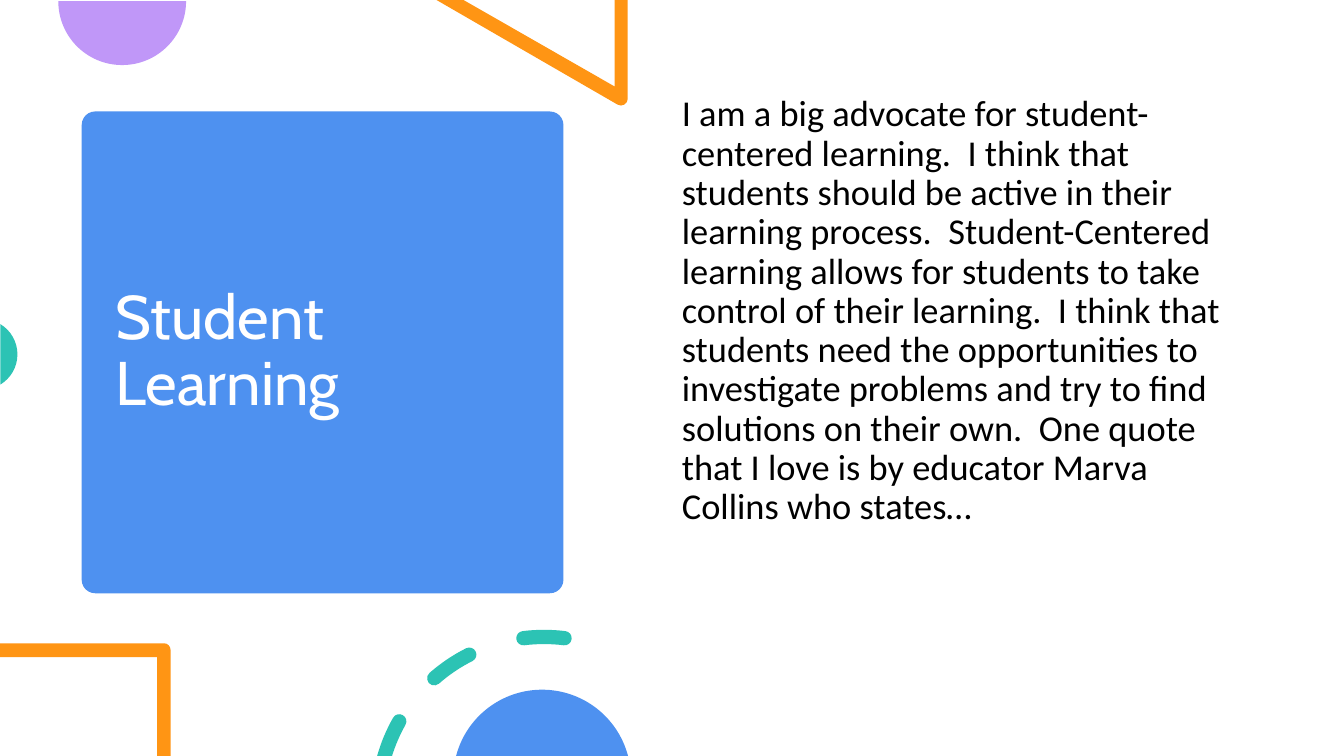
from math import ceil, cos, radians, sin, tan

from lxml.etree import SubElement
from pptx import Presentation
from pptx.dml.color import RGBColor
from pptx.enum.shapes import MSO_SHAPE as Shape
from pptx.enum.text import MSO_ANCHOR as Anchor, MSO_AUTO_SIZE as AutoSize, PP_ALIGN as Align
from pptx.oxml.ns import qn
from pptx.util import Cm, Pt

TITLE = "Student Learning"
BODY = (
    "I am a big advocate for student-centered learning.  I think that students "
    "should be active in their learning process.  Student-Centered learning allows "
    "for students to take control of their learning.  I think that students need "
    "the opportunities to investigate problems and try to find solutions on their "
    "own.  One quote that I love is by educator Marva Collins who states…"
)
WIDTH, HEIGHT = 33.87, 19.05
WHITE, BLUE, PURPLE, ORANGE, TEAL = "FFFFFF", "4E91F0", "C097F8", "FF9514", "2CC3B4"

BLOCKS = [
    (Shape.RECTANGLE, (0, 0, WIDTH, HEIGHT), WHITE),
    (Shape.ROUNDED_RECTANGLE, (2.06, 2.81, 12.14, 12.14), BLUE),
]
CIRCLES = [
    (PURPLE, (3.08, 0.03), 1.61, 0, 180),
    (TEAL, (-0.45, 8.93), 0.89, -59, 59),
    (BLUE, (13.66, 19.62), 2.24, 194.74, 345.26),
]
TRIANGLE = [(15.82, 0), (15.49, 0), (15.49, 2.18), (11.68, 0), (11, 0)]
SQUARE = [(4.3, HEIGHT), (3.96, HEIGHT), (3.96, 16.56), (0, 16.56), (0, 16.21)]
RING_CENTRE, RING_RADIUS, RING_HALF = (13.71, 20.24), 4.19, 0.18
DASHES = [(195.8, 197.26, 209.5), (228.7, 228.7, 243.3), (262.9, 262.9, 277.1)]


def lines(points):
    return [(point,) for point in points]


def arc(centre, radius, start, end):
    count = ceil(abs(end - start) / 90)
    step = radians(end - start) / count
    handle = 4 / 3 * tan(step / 4)

    def spot(angle, lean):
        x = cos(angle) - lean * sin(angle)
        y = sin(angle) + lean * cos(angle)
        return centre[0] + radius * x, centre[1] + radius * y

    first = radians(start)
    moves = [(spot(first, 0),)]
    for i in range(count):
        a, b = first + i * step, first + (i + 1) * step
        moves.append((spot(a, handle), spot(b, -handle), spot(b, 0)))
    return moves


def dash(outer_start, inner_start, end):
    def cap(angle, turn):
        centre = arc(RING_CENTRE, RING_RADIUS, angle, angle + 1)[0][0]
        return arc(centre, RING_HALF, turn, turn + 180)[1:]

    outer = arc(RING_CENTRE, RING_RADIUS + RING_HALF, outer_start, end)
    inner = arc(RING_CENTRE, RING_RADIUS - RING_HALF, end, inner_start)[1:]
    tail = cap(inner_start, inner_start + 180) if outer_start == inner_start else []
    return outer + cap(end, end) + inner + tail


def paint(shape, color):
    shape.shadow.inherit = False
    shape.fill.solid()
    shape.fill.fore_color.rgb = RGBColor.from_string(color)
    shape.line.fill.background()


def add_outline(page, color, *contours):
    builder = None
    for contour in contours:
        points = [(Cm(x), Cm(y)) for move in contour for x, y in move]
        if builder is None:
            builder = page.shapes.build_freeform(*points[0], scale=1.0)
        else:
            builder.move_to(*points[0])
        builder.add_line_segments(points[1:], close=True)
    outline = builder.convert_to_shape()
    paint(outline, color)

    segments = iter(list(outline.element.iter(qn("a:lnTo"))))
    for move in (move for contour in contours for move in contour[1:]):
        segment = next(segments)
        if len(move) == 3:
            curve = segment.makeelement(qn("a:cubicBezTo"))
            segment.addprevious(curve)
            for part in (segment, next(segments), next(segments)):
                curve.append(part[0])
                part.getparent().remove(part)


def write(box, place, text, anchor, font, size, color):
    box.left, box.top, box.width, box.height = (Cm(v) for v in place)
    frame = box.text_frame
    frame.text = text
    frame.word_wrap = True
    frame.auto_size = AutoSize.NONE
    frame.vertical_anchor = anchor
    para = frame.paragraphs[0]
    para.alignment = Align.LEFT
    para.line_spacing = 0.9
    span = para.runs[0]
    span.font.name = font
    span.font.size = Pt(size)
    span.font.color.rgb = RGBColor.from_string(color)
    return para


def main():
    deck = Presentation()
    deck.slide_width, deck.slide_height = Cm(WIDTH), Cm(HEIGHT)
    page = deck.slides.add_slide(deck.slide_layouts[1])
    title, body = page.shapes.title, page.placeholders[1]

    for kind, place, color in BLOCKS:
        block = page.shapes.add_shape(kind, *(Cm(v) for v in place))
        paint(block, color)
    block.adjustments[0] = 0.028
    block.element.addnext(title.element)
    title.element.addnext(body.element)

    write(title, (2.66, 3.09, 10.95, 11.58), TITLE, Anchor.MIDDLE, "Cabin", 44, WHITE)
    para = write(body, (16.93, 2.28, 14.6, 13.59), BODY, Anchor.TOP, "Calibri", 26, "000000")
    para.space_before = Pt(10)
    settings = para._p.get_or_add_pPr()
    settings.set("marL", "0")
    settings.set("indent", "0")
    SubElement(settings, qn("a:buNone"))

    for color, *circle in CIRCLES:
        add_outline(page, color, arc(*circle))
    add_outline(page, ORANGE, lines(TRIANGLE) + arc((15.65, 2.49), 0.17, 120, 0))
    add_outline(page, ORANGE, lines(SQUARE) + arc((4.13, 16.38), 0.17, 270, 360))
    add_outline(page, TEAL, *(dash(*angles) for angles in DASHES))

    deck.save("out.pptx")


if __name__ == "__main__":
    main()
